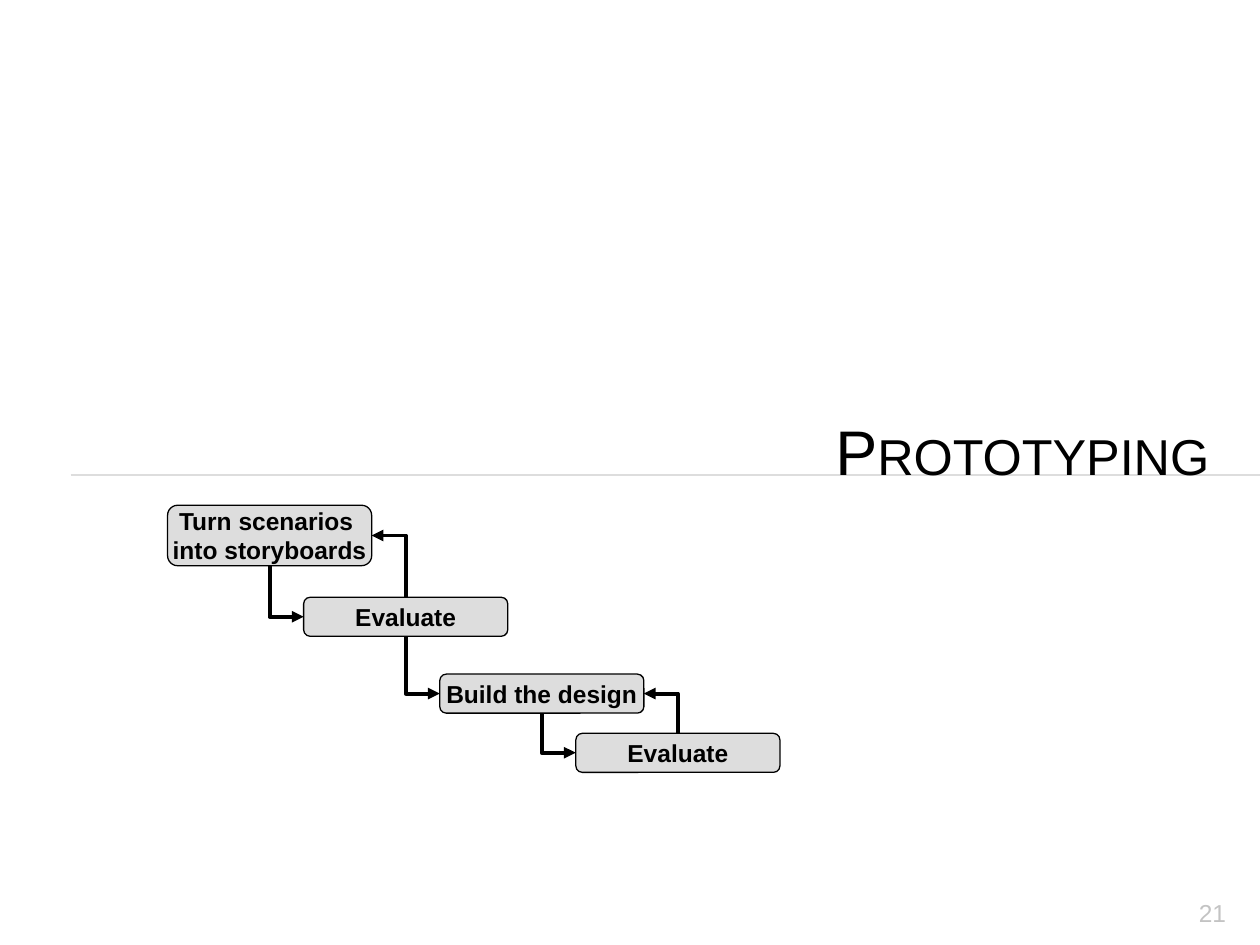
from lxml.etree import SubElement as Sub
from pptx import Presentation
from pptx.dml.color import RGBColor
from pptx.enum.shapes import MSO_CONNECTOR as Link, MSO_SHAPE as Shape
from pptx.enum.text import MSO_ANCHOR as Anchor, MSO_AUTO_SIZE as Fit, PP_ALIGN as Align
from pptx.oxml.ns import qn
from pptx.util import Inches, Pt

TOP, LEFT, BOTTOM, RIGHT = range(4)
STEPS = [  # text, top, height
    ("Turn scenarios \ninto storyboards", 4.01, 0.48),
    ("Evaluate", 4.74, 0.31),
    ("Build the design", 5.35, 0.31),
    ("Evaluate", 5.82, 0.31),
]
START, SHIFT, WIDTH = 1.33, 1.08, 1.62


def paint(part, color):
    part.rgb = RGBColor.from_string(color)


def write(frame, text, size, color, align, bold=False):
    frame.text = text
    for para in frame.paragraphs:
        para.alignment = align
        font = para.font
        font.name, font.size, font.bold = "Arial", Pt(size), bold
        paint(font.color, color)


def add_title(slide, text):
    """Fill the title and lift it in front of the rule."""
    title = slide.shapes.title
    title.left, title.top = Inches(0.2), Inches(3.22)
    title.width, title.height = Inches(9.5), Inches(1.3)
    frame = title.text_frame
    frame.auto_size = Fit.NONE
    frame.vertical_anchor = Anchor.TOP
    frame.margin_top = Inches(0.05)
    write(frame, text, 36, "000000", Align.RIGHT)
    for run in frame.paragraphs[0].runs:
        run.font._element.set("cap", "small")
    slide.shapes._spTree.append(title._element)


def add_number(slide, text):
    box = slide.shapes.add_textbox(Inches(9), Inches(7.08), Inches(0.83), Inches(0.27))
    frame = box.text_frame
    frame.word_wrap = True
    frame.margin_top = Inches(0.05)
    write(frame, text, 14, "C3C3C3", Align.RIGHT)


def add_step(slide, text, left, top, height):
    step = slide.shapes.add_shape(Shape.ROUNDED_RECTANGLE, Inches(left), Inches(top),
                                  Inches(WIDTH), Inches(height))
    step.shadow.inherit = False
    step.fill.solid()
    paint(step.fill.fore_color, "DDDDDD")
    paint(step.line.color, "000000")
    step.line.width = Pt(0.75)
    frame = step.text_frame
    frame.word_wrap = False
    frame.vertical_anchor = Anchor.MIDDLE
    frame.margin_left = frame.margin_right = Inches(0.05)
    frame.margin_top = frame.margin_bottom = Inches(0.03)
    write(frame, text, 14, "000000", Align.CENTER, bold=True)
    return step


def add_line(slide, kind, begin, end, color, width):
    line = slide.shapes.add_connector(kind, *begin, *end)
    paint(line.line.color, color)
    line.line.width = Pt(width)
    Sub(line._element.spPr, qn("a:effectLst"))
    return line


def side(step, site):
    """Return the middle of one side of a step."""
    across = {LEFT: 0, RIGHT: step.width}.get(site, step.width // 2)
    down = {TOP: 0, BOTTOM: step.height}.get(site, step.height // 2)
    return step.left + across, step.top + down


def add_arrow(slide, target, site, source, exit):
    """Draw a one-bend arrow whose head is at the target's side."""
    arrow = add_line(slide, Link.ELBOW, side(target, site), side(source, exit),
                     "000000", 2.25)
    arrow.begin_connect(target, site)
    arrow.end_connect(source, exit)
    props = arrow._element.spPr
    props.find(qn("a:prstGeom")).set("prst", "bentConnector2")
    Sub(props.find(qn("a:ln")), qn("a:headEnd"), type="triangle")


def main():
    deck = Presentation()
    deck.slide_width, deck.slide_height = Inches(10), Inches(7.5)
    slide = deck.slides.add_slide(deck.slide_layouts[5])
    add_line(slide, Link.STRAIGHT, (Inches(0.56), Inches(3.77)),
             (Inches(10), Inches(3.77)), "DDDDDD", 0.75)
    add_number(slide, "21")
    add_title(slide, "Prototyping")
    steps = [add_step(slide, text, START + i * SHIFT, top, height)
             for i, (text, top, height) in enumerate(STEPS)]
    for upper, lower in zip(steps, steps[1:]):
        add_arrow(slide, lower, LEFT, upper, BOTTOM)
    for upper, lower in zip(steps[::2], steps[1::2]):
        add_arrow(slide, upper, RIGHT, lower, TOP)
    deck.save("out.pptx")


if __name__ == "__main__":
    main()
